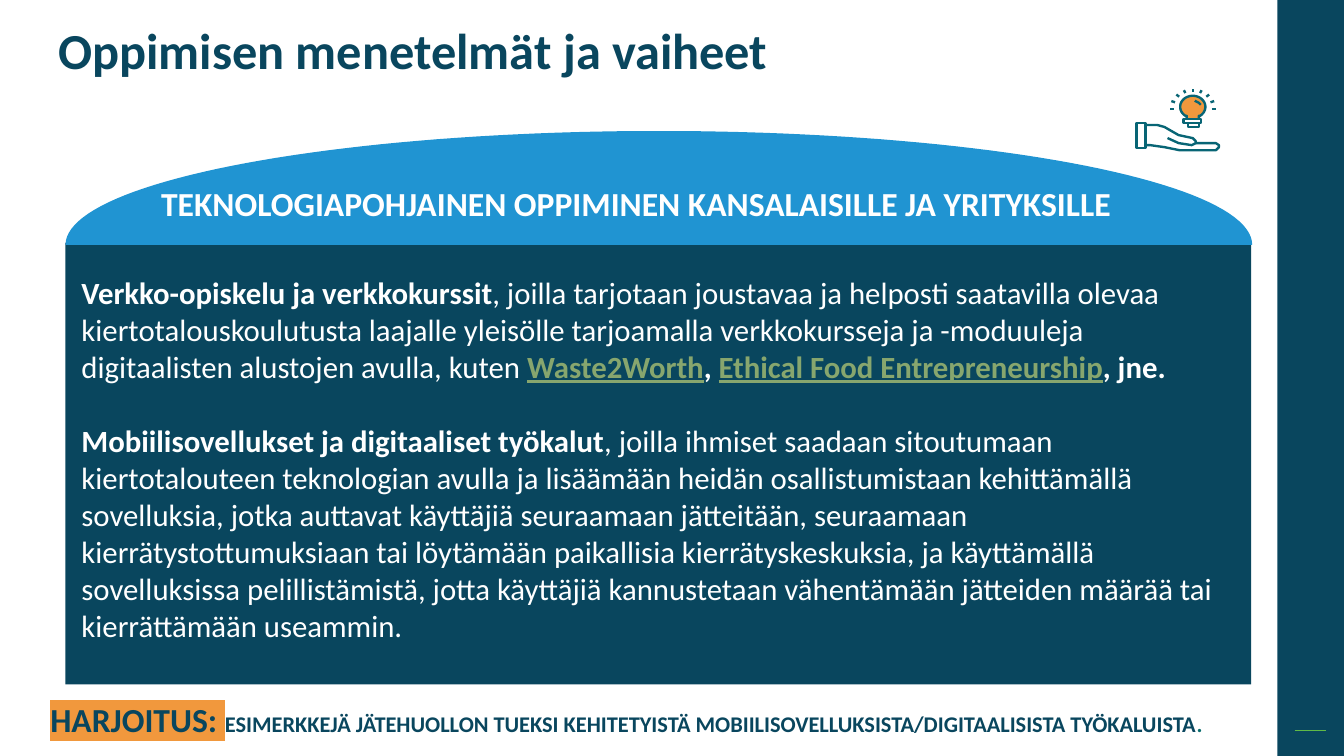
"""Build the slide on technology-based learning methods for citizens and companies."""
from math import cos, radians, sin

from lxml import etree
from pptx import Presentation
from pptx import util as u
from pptx.dml import color
from pptx.enum import shapes, text
from pptx.oxml import ns

THEME = {
    "navy": color.RGBColor.from_string("09465E"),
    "blue": color.RGBColor.from_string("2094D2"),
    "teal": color.RGBColor.from_string("086575"),
    "dot": color.RGBColor.from_string("086D6E"),
    "orange": color.RGBColor.from_string("F1983D"),
    "green": color.RGBColor.from_string("60BA47"),
    "link": color.RGBColor.from_string("87A66E"),
    "white": color.RGBColor.from_string("FFFFFF"),
    "font": "Calibri",
    "title": 36,
    "heading": 24,
    "body": 22,
    "note": 16,
}


def write(sp, paragraphs, inset=0.05, align=text.PP_ALIGN.LEFT, **spacing):
    """Fill a shape with paragraphs of (words, size, colour, bold, underline) runs."""
    tf = sp.text_frame
    frame = {"word_wrap": True, "vertical_anchor": text.MSO_ANCHOR.TOP, "margin_top": u.Inches(inset)}
    for name, value in frame.items():
        setattr(tf, name, value)
    for i, runs in enumerate(paragraphs):
        p = tf.paragraphs[0] if i == 0 else tf.add_paragraph()
        p.alignment = align
        for name, value in spacing.items():
            if i or name != "space_before":
                setattr(p, name, value)
        for words, size, fill, bold, underline in runs:
            r = p.add_run()
            r.text = words
            style = {"name": THEME["font"], "size": u.Pt(THEME[size]), "bold": bold, "underline": underline}
            for name, value in style.items():
                setattr(r.font, name, value)
            r.font.color.rgb = THEME[fill]


def draw(parent, points, fill=None, line=None, closed=True):
    """Draw an outline through points given in inches."""
    points = [(u.Inches(x), u.Inches(y)) for x, y in points]
    builder = parent.build_freeform(*points[0])
    builder.add_line_segments(points[1:], close=closed)
    sp = builder.convert_to_shape()
    sp.shadow.inherit = False
    for part, name in ((sp.fill, fill), (sp.line.fill, line)):
        if name:
            part.solid()
            part.fore_color.rgb = THEME[name]
        else:
            part.background()
    if line:
        sp.line.width = u.Pt(1.7)


prs = Presentation()
prs.slide_width, prs.slide_height = u.Inches(13.33), u.Inches(7.5)
s = prs.slides.add_slide(prs.slide_layouts[6])

rects = {}
for name, box in {
    "band": (12.67, 0, 0.66, 7.5),
    "panel": (0.65, 2.41, 11.76, 4.38),
    "body": (0.71, 2.67, 11.66, 3.8),
}.items():
    sp = s.shapes.add_shape(shapes.MSO_SHAPE.RECTANGLE, *map(u.Inches, box))
    sp.shadow.inherit = False
    sp.fill.solid()
    sp.fill.fore_color.rgb = THEME["navy"]
    sp.line.fill.background()
    rects[name] = sp

dome = [(6.535 - 5.885 * cos(radians(a)), 2.43 - 1.13 * sin(radians(a))) for a in range(0, 181, 2)]
draw(s.shapes, dome, fill="blue")

icon = s.shapes.add_group_shape().shapes
arc = [(11.83 + 0.125 * cos(radians(a)), 1.06 - 0.11 * sin(radians(a))) for a in range(235, -56, -10)]
bulb = [(11.77, 1.18), (11.77, 1.15), *arc, (11.89, 1.15), (11.89, 1.18)]
draw(icon, [(x - 0.01, y) for x, y in bulb], fill="orange")
draw(icon, bulb, line="teal", closed=False)
draw(icon, [(11.85, 1), (11.89, 1.02), (11.91, 1.04)], line="teal", closed=False)
for left, top, right, bottom in ((11.74, 1.18, 11.91, 1.22), (11.78, 1.22, 11.89, 1.26), (11.27, 1.22, 11.36, 1.47)):
    draw(icon, [(left, top), (right, top), (right, bottom), (left, bottom)], line="teal")
hand = [
    (11.36, 1.24), (11.48, 1.24), (11.55, 1.26), (11.62, 1.3), (11.69, 1.34), (11.83, 1.37),
    (11.86, 1.4), (11.86, 1.42), (12.06, 1.42), (12.09, 1.44), (12.09, 1.46), (12.06, 1.49),
    (11.7, 1.49), (11.55, 1.46), (11.41, 1.44), (11.36, 1.44),
]
draw(icon, hand, line="teal")
draw(icon, [(11.58, 1.37), (11.69, 1.42), (11.82, 1.44), (11.86, 1.42)], line="teal", closed=False)

lines = [(s.shapes, (12.84, 7.25, 13.15, 7.25), "green", 1)]
for step in range(9):
    dx, dy = cos(radians(22.5 * step)), sin(radians(22.5 * step))
    ray = (11.83 + 0.19 * dx, 1.08 - 0.17 * dy, 11.83 + 0.23 * dx, 1.08 - 0.2 * dy)
    lines.append((icon, ray, "teal", 1.7))
for parent, ends, name, width in lines:
    c = parent.add_connector(shapes.MSO_CONNECTOR.STRAIGHT, *map(u.Inches, ends))
    c.line.color.rgb = THEME[name]
    c.line.width = u.Pt(width)
    etree.SubElement(c.element.spPr, ns.qn("a:effectLst"))

title = s.shapes.add_textbox(*map(u.Inches, (0.48, 0.18, 8.15, 0.55)))
write(title, [[("Oppimisen menetelmät ja vaiheet", "title", "navy", True, False)]], inset=0.08, line_spacing=0.9)

heading = s.shapes.add_textbox(*map(u.Inches, (1.27, 1.77, 10.08, 0.5)))
words = "TEKNOLOGIAPOHJAINEN OPPIMINEN KANSALAISILLE JA YRITYKSILLE"
write(heading, [[(words, "heading", "white", True, False)]], align=text.PP_ALIGN.CENTER)

online = (
    ", joilla tarjotaan joustavaa ja helposti saatavilla olevaa kiertotalouskoulutusta laajalle yleisölle "
    "tarjoamalla verkkokursseja ja -moduuleja digitaalisten alustojen avulla, kuten "
)
mobile = (
    ", joilla ihmiset saadaan sitoutumaan kiertotalouteen teknologian avulla ja lisäämään heidän "
    "osallistumistaan kehittämällä sovelluksia, jotka auttavat käyttäjiä seuraamaan jätteitään, seuraamaan "
    "kierrätystottumuksiaan tai löytämään paikallisia kierrätyskeskuksia, ja käyttämällä sovelluksissa "
    "pelillistämistä, jotta käyttäjiä kannustetaan vähentämään jätteiden määrää tai kierrättämään useammin."
)
methods = [
    [
        ("Verkko-opiskelu ja verkkokurssit", "body", "white", True, False),
        (online, "body", "white", False, False),
        ("Waste2Worth", "body", "link", True, True),
        (", ", "body", "white", True, False),
        ("Ethical Food Entrepreneurship", "body", "link", True, True),
        (", jne.", "body", "white", True, False),
    ],
    [
        ("Mobiilisovellukset ja digitaaliset työkalut", "body", "white", True, False),
        (mobile, "body", "white", False, False),
    ],
]
write(rects["body"], methods, space_before=u.Pt(26.5))

exercise = s.shapes.add_textbox(*map(u.Inches, (0.4, 6.6, 12.32, 0.77)))
task = "ESIMERKKEJÄ JÄTEHUOLLON TUEKSI KEHITETYISTÄ MOBIILISOVELLUKSISTA/DIGITAALISISTA TYÖKALUISTA"
write(exercise, [[
    ("HARJOITUS: ", "heading", "navy", True, False),
    (task, "note", "navy", True, False),
    (".", "note", "dot", True, False),
]], inset=0.33)
label = exercise.text_frame.paragraphs[0].runs[0]
highlight = etree.Element(ns.qn("a:highlight"))
etree.SubElement(highlight, ns.qn("a:srgbClr"), val=str(THEME["orange"]))
label.font.color.rgb = THEME["navy"]
label.font._element.find(ns.qn("a:solidFill")).addnext(highlight) if hasattr(label.font, "_element") else label._r.rPr.find(ns.qn("a:solidFill")).addnext(highlight)

prs.save("out.pptx")
